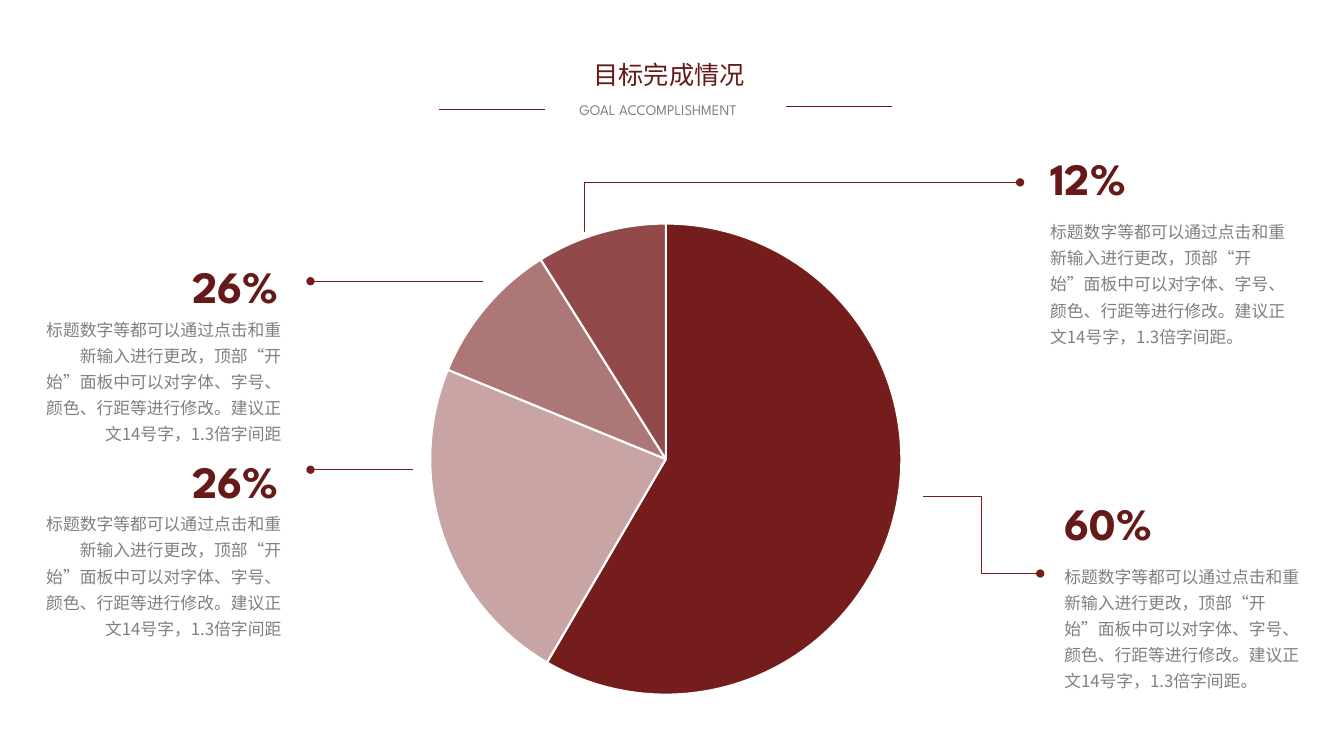
import pptx
import pptx.util
import pptx.chart.data
import pptx.dml.color
import pptx.enum.chart
import pptx.enum.lang
import pptx.enum.shapes
import pptx.enum.text
import pptx.oxml
import pptx.oxml.ns

COLORS = {
    "wine": "751D1C",
    "heading": "651919",
    "body": "808080",
    "white": "FFFFFF",
    "black": "000000",
}
SLICES = [("1", 59, "751D1C"), ("2", 23, "C8A4A4"),
          ("3", 10, "AD7777"), ("4", 9, "91494A")]

ADVICE = ("标题数字等都可以通过点击和重新输入进行更改，顶部“开始”面板中可以对字体、字号、"
          "颜色、行距等进行修改。建议正文14号字，1.3倍字间距")

SANS, DISPLAY = "Noto Sans CJK SC", "League Spartan"
TITLE = {"size": pptx.util.Pt(18), "name": SANS}
SUBTITLE = {"size": pptx.util.Pt(10.5), "name": DISPLAY}
PERCENT = {"size": pptx.util.Pt(32), "name": DISPLAY, "bold": True}
BODY = {"size": pptx.util.Pt(12), "name": SANS}


def rgb(color):
    return pptx.dml.color.RGBColor.from_string(COLORS.get(color, color))


class GoalSlide:
    """Draws on one slide; lengths are columns and rows of a tenth of an inch."""

    CELL = pptx.util.Inches(0.1)
    COLUMNS, ROWS = 133.33, 75

    def __init__(self, deck):
        deck.slide_width = self.cells(self.COLUMNS)
        deck.slide_height = self.cells(self.ROWS)
        self.slide = deck.slides.add_slide(deck.slide_layouts[6])

    def cells(self, count):
        return pptx.util.Emu(round(count * self.CELL))

    def box(self, *lengths):
        return [self.cells(length) for length in lengths]

    def text(self, content, place, style, color, align="LEFT", spacing=None, wrap=True):
        frame = self.slide.shapes.add_textbox(*self.box(*place)).text_frame
        frame.word_wrap = wrap
        frame.auto_size = pptx.enum.text.MSO_AUTO_SIZE.SHAPE_TO_FIT_TEXT
        paragraph = frame.paragraphs[0]
        paragraph.alignment = getattr(pptx.enum.text.PP_ALIGN, align)
        paragraph.line_spacing = spacing
        run = paragraph.add_run()
        run.text = content
        for attribute, value in style.items():
            setattr(run.font, attribute, value)
        run.font.color.rgb = rgb(color)
        run.font.language_id = pptx.enum.lang.MSO_LANGUAGE_ID.SIMPLIFIED_CHINESE
        east_asian = pptx.oxml.ns.qn("a:ea")
        run.font._element.makeelement(east_asian)
        pptx.oxml.xmlchemy.OxmlElement("a:ea")
        typeface = pptx.oxml.xmlchemy.OxmlElement("a:ea")
        typeface.set("typeface", style["name"])
        run.font._element.append(typeface)

    def line(self, start, end, color, dot=False, bend=None):
        kinds = pptx.enum.shapes.MSO_CONNECTOR
        kind = kinds.STRAIGHT if bend is None else kinds.ELBOW
        connector = self.slide.shapes.add_connector(kind, *self.box(*start, *end))
        connector.line.color.rgb = rgb(color)
        connector.line.width = pptx.util.Pt(0.5)
        properties = connector._element.spPr
        properties.append(pptx.oxml.xmlchemy.OxmlElement("a:effectLst"))
        if dot:
            tail = pptx.oxml.xmlchemy.OxmlElement("a:tailEnd")
            tail.set("type", "oval")
            properties.find(pptx.oxml.ns.qn("a:ln")).append(tail)
        if bend is not None:
            guide = pptx.oxml.xmlchemy.OxmlElement("a:gd")
            guide.set("name", "adj1")
            guide.set("fmla", f"val {round(bend * 100000)}")
            properties.prstGeom.get_or_add_avLst().append(guide)

    def pie(self, slices, place):
        shares = pptx.chart.data.CategoryChartData()
        shares.categories = [label for label, _, _ in slices]
        shares.add_series("Series 1", [value for _, value, _ in slices])
        chart = self.slide.shapes.add_chart(
            pptx.enum.chart.XL_CHART_TYPE.PIE, *self.box(*place), shares).chart
        for attribute, value in {"has_legend": False, "has_title": False}.items():
            setattr(chart, attribute, value)
        for attribute, value in {"size": pptx.util.Pt(10), "name": "Calibri"}.items():
            setattr(chart.font, attribute, value)
        chart.font.color.rgb = rgb("black")
        plot = chart.plots[0]
        plot.vary_by_categories = True
        for index, (_, _, color) in enumerate(slices):
            wedge = plot.series[0].points[index].format
            wedge.fill.solid()
            wedge.fill.fore_color.rgb = rgb(color)
            wedge.line.color.rgb = rgb("white")
            wedge.line.width = pptx.util.Pt(1.5)

    def callout(self, percent, advice, number_at, advice_at, align):
        self.text(advice, (*advice_at, 25.4, 13.9), BODY, "body", align, spacing=1.3)
        self.text(percent, (*number_at, 13.6, 6.4), PERCENT, "heading")


def main():
    deck = pptx.Presentation()
    goals = GoalSlide(deck)

    # Pie of the goal shares
    goals.pie(SLICES, (28.9, 20.8, 74.3, 49.5))

    # Callouts on the right, with bent leaders
    for percent, left, top, start, end, bend in [
        ("60%", 104.6, 48.7, (91.6, 49.2), (103.2, 56.9), 0.5),
        ("12%", 103.2, 14.5, (57.9, 23), (101.2, 18.1), 0.001),
    ]:
        goals.line(start, end, "wine", dot=True, bend=bend)
        goals.callout(percent, ADVICE + "。", (left, top), (left, top + 6.4), "LEFT")

    # Callouts on the left, with straight leaders
    for percent, top, leader_start, leader_row in [
        ("26%", 44.5, 41, 46.6),
        ("26%", 25.2, 47.9, 27.9),
    ]:
        goals.line((leader_start, leader_row), (30.8, leader_row), "wine", dot=True)
        goals.callout(percent, ADVICE, (18.1, top), (3.5, top + 5.4), "RIGHT")

    # Heading between two rules
    goals.text("目标完成情况", (57.9, 5.4, 22.2, 4), TITLE, "heading")
    goals.text("GOAL ACCOMPLISHMENT", (56.5, 9.5, 20.3, 2.8), SUBTITLE, "body", wrap=False)
    for left, row in [(43.6, 10.9), (78, 10.6)]:
        goals.line((left + 10.5, row), (left, row), "heading")

    deck.save("out.pptx")


if __name__ == "__main__":
    main()
